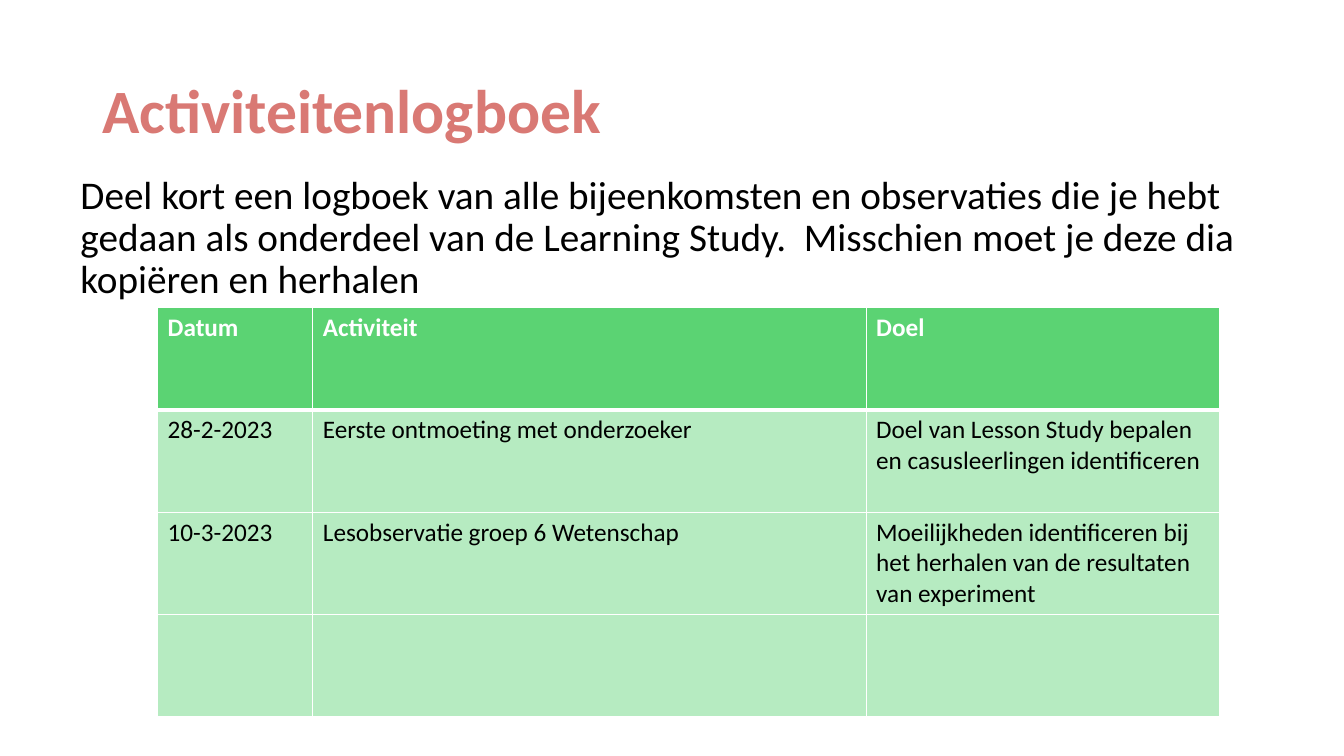
from lxml.etree import SubElement
from pptx import Presentation
from pptx.dml.color import RGBColor
from pptx.enum.text import MSO_ANCHOR
from pptx.oxml.ns import qn
from pptx.util import Pt

COLORS = {"title": "D97974", "text": "000000", "green": "5BD373", "white": "FFFFFF"}
FONT = "Calibri"
BODY_ALPHA = 44


def format_text(paragraph, size, color, bold=False):
    for run in paragraph.runs:
        run.font.name = FONT
        run.font.size = Pt(size)
        run.font.bold = bold
        run.font.color.rgb = RGBColor.from_string(COLORS[color])


def add_border(cell, position, side, width):
    properties = cell._tc.get_or_add_tcPr()
    line = SubElement(properties, qn(f"a:ln{side}"), w=str(Pt(width)))
    fill = SubElement(line, qn("a:solidFill"))
    SubElement(fill, qn("a:srgbClr"), val=COLORS["white"])
    properties.insert(position, line)


presentation = Presentation()
presentation.slide_width = Pt(960)
presentation.slide_height = Pt(540)
slide = presentation.slides.add_slide(presentation.slide_layouts[6])

text_boxes = [
    ("Activiteitenlogboek", (66, 28.75, 828, 104.4), MSO_ANCHOR.MIDDLE, 44, "title", True, 0),
    ("Deel kort een logboek van alle bijeenkomsten en observaties die je hebt gedaan "
     "als onderdeel van de Learning Study.  Misschien moet je deze dia kopiëren en herhalen",
     (50.4, 121.7, 843.1, 365), MSO_ANCHOR.TOP, 28, "text", False, 10),
]
for text, place, anchor, size, color, bold, space_before in text_boxes:
    text_box = slide.shapes.add_textbox(*[Pt(length) for length in place])
    text_frame = text_box.text_frame
    text_frame.word_wrap = True
    text_frame.vertical_anchor = anchor
    text_frame.text = text
    paragraph = text_frame.paragraphs[0]
    paragraph.line_spacing = 0.9
    paragraph.space_before = Pt(space_before)
    format_text(paragraph, size, color, bold)

log_rows = [
    ("Datum", "Activiteit", "Doel"),
    ("28-2-2023", "Eerste ontmoeting met onderzoeker",
     "Doel van Lesson Study bepalen en casusleerlingen identificeren"),
    ("10-3-2023", "Lesobservatie groep 6 Wetenschap",
     "Moeilijkheden identificeren bij het herhalen van de resultaten van experiment"),
    ("", "", ""),
]
column_widths = [110.9, 395.2, 252.8]
row_height = 73

table_frame = slide.shapes.add_table(
    len(log_rows), len(column_widths), Pt(112.6), Pt(219.8),
    Pt(sum(column_widths)), Pt(row_height * len(log_rows)))
table = table_frame.table
for column, width in zip(table.columns, column_widths):
    column.width = Pt(width)

for row_index, texts in enumerate(log_rows):
    table.rows[row_index].height = Pt(row_height)
    is_header = row_index == 0
    for column_index, text in enumerate(texts):
        cell = table.cell(row_index, column_index)
        cell.text_frame.text = text
        paragraph = cell.text_frame.paragraphs[0]
        paragraph.font.size = Pt(18)
        format_text(paragraph, 18, "white" if is_header else "text", is_header)
        cell.fill.solid()
        cell.fill.fore_color.rgb = RGBColor.from_string(COLORS["green"])
        if not is_header:
            fill_color = cell._tc.tcPr.find(qn("a:solidFill")).find(qn("a:srgbClr"))
            SubElement(fill_color, qn("a:alpha"), val=str(BODY_ALPHA * 1000))
        border_widths = {"L": 1, "R": 1, "T": 3 if row_index == 1 else 1, "B": 3 if is_header else 1}
        for position, (side, width) in enumerate(border_widths.items()):
            add_border(cell, position, side, width)

presentation.save("out.pptx")
